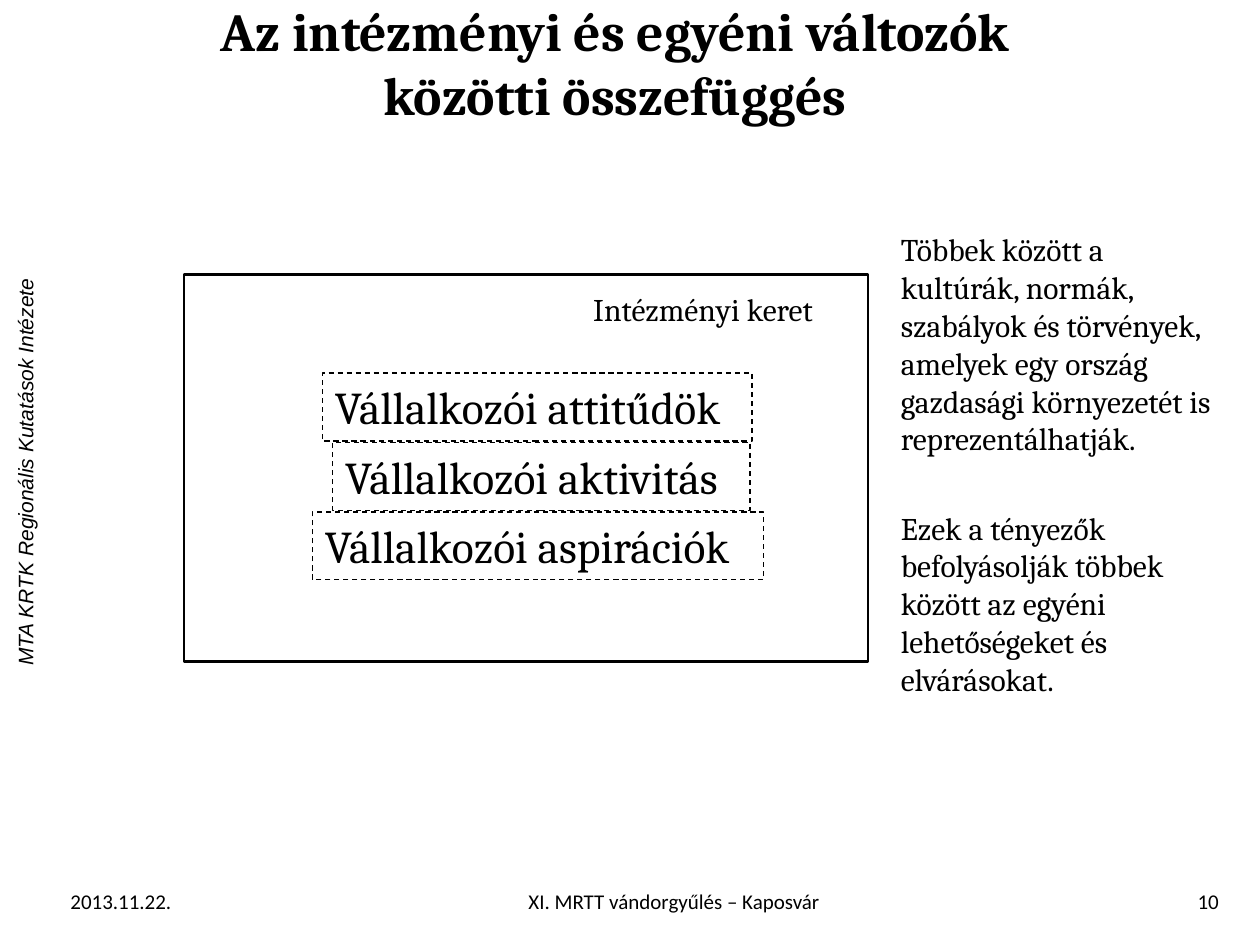
from dataclasses import dataclass

from pptx import Presentation
from pptx.dml.color import RGBColor
from pptx.enum.dml import MSO_LINE
from pptx.enum.shapes import MSO_SHAPE
from pptx.enum.text import MSO_ANCHOR, PP_ALIGN
from pptx.util import Cm, Pt


@dataclass(frozen=True)
class Theme:
    ink: RGBColor = RGBColor(0, 0, 0)
    serif: str = "Cambria"
    sans: str = "Calibri"
    label_font: str = "Arial"
    title_size: float = 30.6
    factor_size: int = 26
    body_size: int = 18
    small_size: int = 12


THEME = Theme()


def write_text(shape, text, size, font=THEME.serif, align=PP_ALIGN.LEFT,
               anchor=MSO_ANCHOR.TOP, bold=False, italic=False):
    frame = shape.text_frame
    frame.word_wrap = True
    frame.vertical_anchor = anchor
    paragraph = frame.paragraphs[0]
    paragraph.text = text
    paragraph.alignment = align
    paragraph.font.name = font
    paragraph.font.size = Pt(size)
    paragraph.font.bold = bold
    paragraph.font.italic = italic
    paragraph.font.color.rgb = THEME.ink


def add_text(slide, text, left, top, width, height, size, **style):
    """Add a text box, with its place in centimetres."""
    box = slide.shapes.add_textbox(Cm(left), Cm(top), Cm(width), Cm(height))
    write_text(box, text, size, **style)
    return box


def add_outline(slide, left, top, width, height, line_width, dash=None):
    """Add an unfilled rectangle, with its place in centimetres."""
    shape = slide.shapes.add_shape(
        MSO_SHAPE.RECTANGLE, Cm(left), Cm(top), Cm(width), Cm(height))
    shape.shadow.inherit = False
    shape.fill.background()
    shape.line.color.rgb = THEME.ink
    shape.line.width = Pt(line_width)
    if dash:
        shape.line.dash_style = dash
    return shape


def add_factors(slide):
    factors = [
        ("Vállalkozói attitűdök", 6.5, 8.66),
        ("Vállalkozói aktivitás", 6.71, 8.41),
        ("Vállalkozói aspirációk", 6.3, 9.09),
    ]
    for row, (text, left, width) in enumerate(factors):
        shape = add_outline(slide, left, 7.52 + row * 1.4, width, 1.37,
                            0.75, MSO_LINE.DASH)
        write_text(shape, text, THEME.factor_size)


def add_footer(slide):
    parts = [
        ("2013.11.22.", 1.17, 2.72, PP_ALIGN.LEFT),
        ("XI. MRTT vándorgyűlés – Kaposvár", 4.09, 19, PP_ALIGN.CENTER),
        ("10", 23.09, 1.73, PP_ALIGN.RIGHT),
    ]
    for text, left, width, align in parts:
        add_text(slide, text, left, 17.65, width, 1.02, THEME.small_size,
                 font=THEME.sans, align=align, anchor=MSO_ANCHOR.MIDDLE)


def main():
    presentation = Presentation()
    presentation.slide_width = Cm(25.4)
    presentation.slide_height = Cm(19.05)
    slide = presentation.slides.add_slide(presentation.slide_layouts[6])

    institute = add_text(
        slide, "MTA KRTK Regionális Kutatások Intézete", -9.02, 9.14, 19.05, 0.76,
        THEME.small_size, font=THEME.label_font, align=PP_ALIGN.CENTER, italic=True)
    institute.rotation = 270
    add_text(slide, "Az intézményi és egyéni változók közötti összefüggés",
             2.69, 0, 19.41, 2.51, THEME.title_size, align=PP_ALIGN.CENTER,
             anchor=MSO_ANCHOR.MIDDLE, bold=True)

    add_factors(slide)
    add_outline(slide, 3.71, 5.54, 13.79, 7.8, 1.5)
    add_text(slide, "Intézményi keret", 11.71, 5.72, 5.16, 1.02, THEME.body_size)

    add_text(slide, "Többek között a kultúrák, normák, szabályok és törvények, "
             "amelyek egy ország gazdasági környezetét is reprezentálhatják.",
             17.91, 4.52, 6.81, 5.64, THEME.body_size)
    add_text(slide, "Ezek a tényezők befolyásolják többek között az egyéni "
             "lehetőségeket és elvárásokat.",
             17.91, 10.13, 6.81, 4.11, THEME.body_size)
    add_footer(slide)

    presentation.save("out.pptx")


if __name__ == "__main__":
    main()
